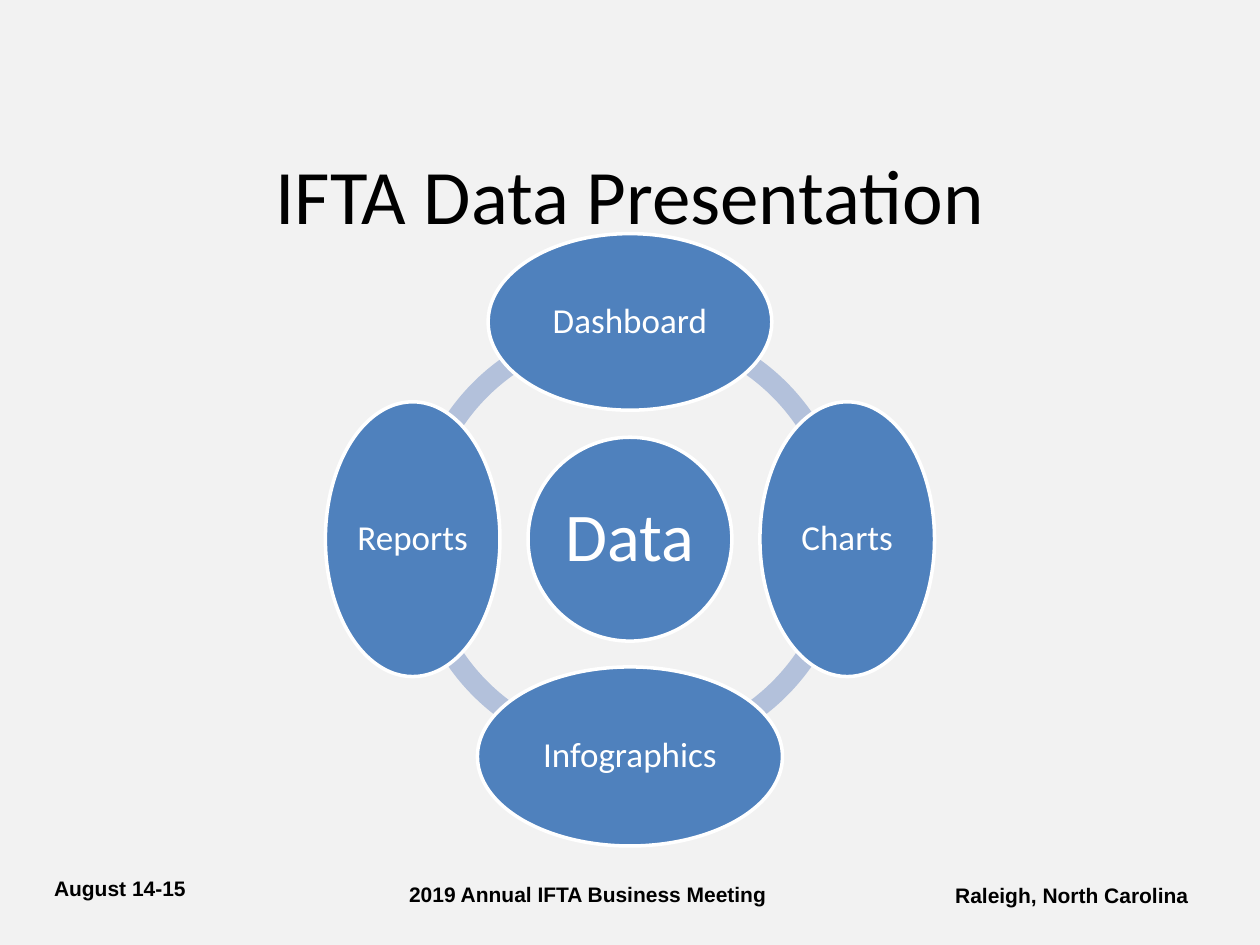
from dataclasses import dataclass

from pptx import Presentation
from pptx.dml.color import RGBColor
from pptx.enum.shapes import MSO_SHAPE
from pptx.enum.text import MSO_ANCHOR, PP_ALIGN
from pptx.util import Cm, Pt

OVAL, ARC = MSO_SHAPE.OVAL, MSO_SHAPE.BLOCK_ARC
LEFT, MID, RIGHT = PP_ALIGN.LEFT, PP_ALIGN.CENTER, PP_ALIGN.RIGHT
TOP, CENTER = MSO_ANCHOR.TOP, MSO_ANCHOR.MIDDLE


@dataclass(frozen=True)
class Theme:
    back: RGBColor = RGBColor(0xF2, 0xF2, 0xF2)
    ink: RGBColor = RGBColor(0, 0, 0)
    white: RGBColor = RGBColor(0xFF, 0xFF, 0xFF)
    blue: RGBColor = RGBColor(0x4F, 0x81, 0xBD)
    ring: RGBColor = RGBColor(0xB3, 0xC1, 0xDB)
    head: str = "Calibri"
    foot: str = "Arial"
    title: int = 44
    hub: int = 39
    node: int = 20
    small: int = 12


class Deck:
    def __init__(self, theme):
        self.theme = theme
        self.prs = Presentation()
        self.prs.slide_width, self.prs.slide_height = Cm(25.4), Cm(19.05)
        self.slide = self.prs.slides.add_slide(self.prs.slide_layouts[5])
        fill = self.slide.background.fill
        fill.solid()
        fill.fore_color.rgb = theme.back

    def label(self, frame, text, size, color, font, align=MID, bold=False):
        para = frame.paragraphs[0]
        para.alignment = align
        run = para.add_run()
        run.text = text
        run.font.name, run.font.size = font, Pt(size)
        run.font.bold, run.font.color.rgb = bold, color
        return para

    def title(self, text, x, y, w, h):
        box = self.slide.shapes.title
        box.left, box.top, box.width, box.height = Cm(x), Cm(y), Cm(w), Cm(h)
        box.text_frame.vertical_anchor = CENTER
        self.label(box.text_frame, text, self.theme.title,
                   self.theme.ink, self.theme.head)

    def footer(self, text, x, y, w, h, align, anchor):
        frame = self.slide.shapes.add_textbox(
            Cm(x), Cm(y), Cm(w), Cm(h)).text_frame
        frame.word_wrap = True
        frame.vertical_anchor = anchor
        self.label(frame, text, self.theme.small, self.theme.ink,
                   self.theme.foot, align, True)

    def shape(self, kind, group, x, y, w, h, color):
        """Add a filled shape centred on x, y."""
        item = group.shapes.add_shape(
            kind, Cm(x - w / 2), Cm(y - h / 2), Cm(w), Cm(h))
        item.shadow.inherit = False
        item.fill.solid()
        item.fill.fore_color.rgb = color
        return item

    def arc(self, group, x, y, size, start, end):
        item = self.shape(ARC, group, x, y, size, size, self.theme.ring)
        item.line.fill.background()
        # Angles are stored in 60000ths of a degree, scaled by 100000
        for i, value in enumerate((start * 0.6, end * 0.6, 0.046)):
            item.adjustments[i] = value

    def oval(self, group, text, x, y, w, h, size):
        item = self.shape(OVAL, group, x, y, w, h, self.theme.blue)
        item.line.color.rgb, item.line.width = self.theme.white, Pt(2)
        frame = item.text_frame
        frame.word_wrap = True
        frame.vertical_anchor = CENTER
        frame.margin_left = frame.margin_right = Cm(0.08)
        frame.margin_top = frame.margin_bottom = Cm(0.08)
        para = self.label(frame, text, size, self.theme.white, self.theme.head)
        para.line_spacing = 0.9


def main():
    theme = Theme()
    deck = Deck(theme)

    # Footer line
    deck.footer("2019 Annual IFTA Business Meeting",
                7.62, 17.65, 8.46, 0.76, MID, TOP)
    deck.footer("August 14-15", 0.84, 17.4, 5.92, 1.02, LEFT, CENTER)
    deck.footer("Raleigh, North Carolina",
                18.29, 17.53, 5.92, 1.02, RIGHT, CENTER)

    # Ring of four quarter arcs
    x, y, reach = 12.7, 10.87, 4.38
    wheel = deck.slide.shapes.add_group_shape()
    for start in (180, 90, 0, 270):
        deck.arc(wheel, x, y, 8.94, start, (start + 90) % 360)

    # Hub, then the nodes clockwise from the top
    deck.oval(wheel, "Data", x, y, 4.11, 4.11, theme.hub)
    nodes = (
        ("Dashboard", 0, -1, 5.72, 3.56),
        ("Charts", 1, 0, 3.52, 5.54),
        ("Infographics", 0, 1, 6.15, 3.61),
        ("Reports", -1, 0, 3.52, 5.54),
    )
    for text, dx, dy, w, h in nodes:
        deck.oval(wheel, text, x + dx * reach, y + dy * reach, w, h, theme.node)

    # Title
    deck.title("IFTA Data Presentation", 1.27, 2.74, 22.86, 2.34)
    deck.prs.save("out.pptx")


if __name__ == "__main__":
    main()
